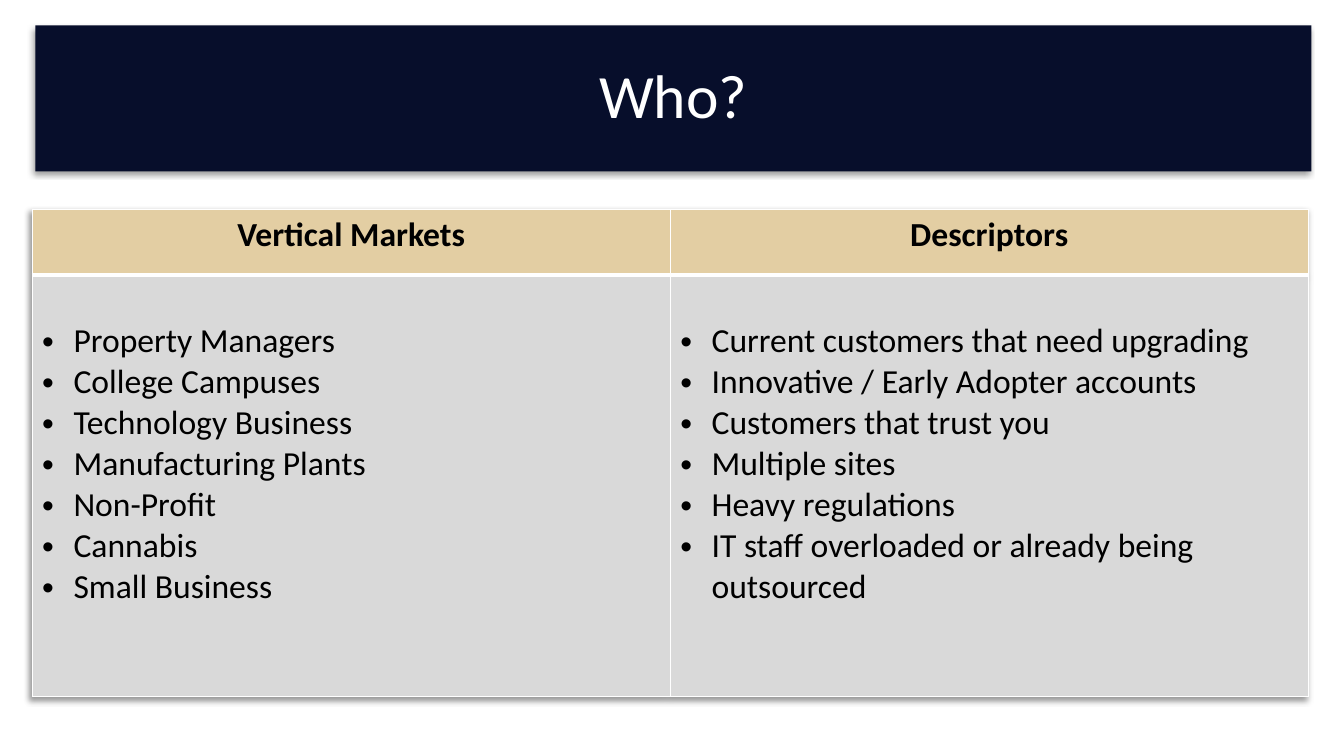
from dataclasses import dataclass

from lxml.etree import SubElement
from pptx import Presentation
from pptx.dml.color import RGBColor
from pptx.enum.shapes import MSO_SHAPE as Preset
from pptx.enum.text import MSO_ANCHOR as Anchor, PP_ALIGN as Align
from pptx.oxml import parse_xml
from pptx.oxml.ns import nsdecls, qn
from pptx.util import Cm, Pt


@dataclass(frozen=True)
class Theme:
    font: str = "Calibri"
    title_size: int = 44
    table_size: int = 24
    navy: str = "070E2B"
    sand: str = "E3CEA3"
    grey: str = "D9D9D9"
    white: str = "FFFFFF"
    black: str = "000000"


THEME = Theme()
BAND_WIDTH = Cm(32.16)
BULLET_INDENT = Cm(0.79)

MARKETS = {
    "Vertical Markets": [
        "Property Managers",
        "College Campuses",
        "Technology Business",
        "Manufacturing Plants",
        "Non-Profit",
        "Cannabis",
        "Small Business",
    ],
    "Descriptors": [
        "Current customers that need upgrading",
        "Innovative / Early Adopter accounts",
        "Customers that trust you",
        "Multiple sites",
        "Heavy regulations",
        "IT staff overloaded or already being outsourced",
    ],
}


def soft_shadow():
    return parse_xml(
        f'<a:effectLst {nsdecls("a")}>'
        f'<a:outerShdw blurRad="{Pt(4)}" dist="{Pt(3)}" dir="8100000" algn="tr" rotWithShape="0">'
        f'<a:srgbClr val="{THEME.black}"><a:alpha val="40000"/></a:srgbClr>'
        '</a:outerShdw></a:effectLst>'
    )


def add_bullet(paragraph):
    props = paragraph._p.get_or_add_pPr()
    props.set("marL", str(BULLET_INDENT))
    props.set("indent", str(-BULLET_INDENT))
    SubElement(props, qn("a:buFont"), typeface="Arial")
    SubElement(props, qn("a:buChar"), char="•")


def write(frame, *lines, size=THEME.table_size, color=THEME.black, bold=False,
          align=Align.LEFT, bullets=False, spacing=None):
    for index, line in enumerate(lines):
        paragraph = frame.add_paragraph() if index else frame.paragraphs[0]
        paragraph.alignment = align
        if spacing:
            paragraph.line_spacing = spacing
        if bullets:
            add_bullet(paragraph)
        run = paragraph.add_run()
        run.text = line
        run.font.name = THEME.font
        run.font.size = Pt(size)
        run.font.bold = bold
        run.font.color.rgb = RGBColor.from_string(color)


def style_cell(cell, fill, **widths):
    """Draw white borders, one point wide unless a side says otherwise."""
    props = cell._tc.get_or_add_tcPr()
    for side in "LRTB":
        props.append(parse_xml(
            f'<a:ln{side} {nsdecls("a")} w="{Pt(widths.get(side, 1))}">'
            f'<a:solidFill><a:srgbClr val="{THEME.white}"/></a:solidFill></a:ln{side}>'
        ))
    cell.fill.solid()
    cell.fill.fore_color.rgb = RGBColor.from_string(fill)


def add_title(slide, text):
    banner = slide.shapes.add_shape(Preset.RECTANGLE, Cm(0.89), Cm(0.64), BAND_WIDTH, Cm(3.68))
    banner.fill.solid()
    banner.fill.fore_color.rgb = RGBColor.from_string(THEME.navy)
    banner.line.fill.background()
    banner._element.spPr.append(soft_shadow())
    banner.text_frame.word_wrap = True
    banner.text_frame.vertical_anchor = Anchor.MIDDLE
    write(banner.text_frame, text, size=THEME.title_size, color=THEME.white,
          align=Align.CENTER, spacing=0.9)


def add_market_table(slide, columns):
    header_height, body_height = Cm(1.65), Cm(10.62)
    table = slide.shapes.add_table(2, len(columns), Cm(0.81), Cm(5.28), BAND_WIDTH,
                                   header_height + body_height).table
    table.horz_banding = False
    table.rows[0].height = header_height
    table.rows[1].height = body_height
    table._tbl.tblPr.insert(0, soft_shadow())

    for index, (heading, entries) in enumerate(columns.items()):
        header, body = table.cell(0, index), table.cell(1, index)
        style_cell(header, THEME.sand, B=3)
        write(header.text_frame, heading, bold=True, align=Align.CENTER)
        style_cell(body, THEME.grey, T=3)
        body.margin_top = Cm(1.16)
        write(body.text_frame, *entries, bullets=True)


def main():
    deck = Presentation()
    deck.slide_width, deck.slide_height = Cm(33.87), Cm(19.05)
    slide = deck.slides.add_slide(deck.slide_layouts[6])

    # Title banner
    add_title(slide, "Who?")

    # Markets and their descriptors
    add_market_table(slide, MARKETS)

    deck.save("out.pptx")


if __name__ == "__main__":
    main()
